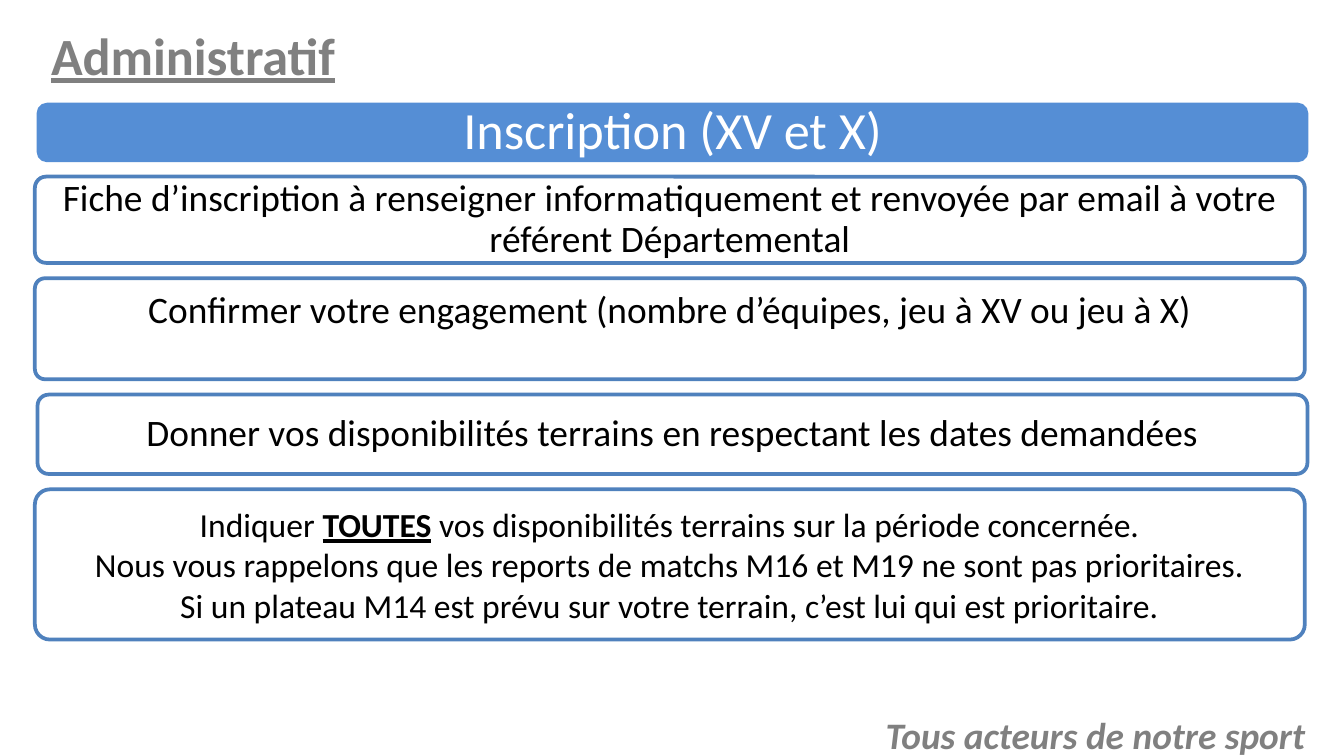
from pptx import Presentation
from pptx.dml.color import RGBColor
from pptx.enum.shapes import MSO_SHAPE as Shape
from pptx.enum.text import MSO_ANCHOR as Anchor, MSO_AUTO_SIZE as AutoSize, PP_ALIGN as Align
from pptx.util import Cm, Pt

WHITE = RGBColor(0xFF, 0xFF, 0xFF)
BLACK = RGBColor(0x00, 0x00, 0x00)
GREY = RGBColor(0x80, 0x80, 0x80)
HEADER_BLUE = RGBColor(0x55, 0x8E, 0xD5)
BORDER_BLUE = RGBColor(0x4F, 0x81, 0xBD)

FONT = "Calibri"
PANEL_WIDTH = 24
PANEL_GAP = 0.29
EMPHASIS = "TOUTES"

PANELS = [
    dict(text="Inscription (XV et X)", left=0.71, height=1.09, corner=0.167,
         fill=HEADER_BLUE, border=HEADER_BLUE, weight=1, size=28, color=WHITE),
    dict(text="Fiche d’inscription à renseigner informatiquement et renvoyée par email "
              "à votre référent Départemental", left=0.66, height=1.63, corner=0.13),
    dict(text="Confirmer votre engagement (nombre d’équipes, jeu à XV ou jeu à X)",
         left=0.66, height=1.91, corner=0.1, anchor=Anchor.TOP),
    dict(text="Donner vos disponibilités terrains en respectant les dates demandées",
         left=0.71, height=1.5, corner=0.14),
    dict(text="Indiquer TOUTES vos disponibilités terrains sur la période concernée.\n"
              "Nous vous rappelons que les reports de matchs M16 et M19 ne sont pas prioritaires.\n"
              "Si un plateau M14 est prévu sur votre terrain, c’est lui qui est prioritaire.",
         left=0.66, height=2.84, corner=0.1, size=18, spacing=1.0),
]


def add_span(para, text, size, color, bold=False, italic=False, underline=False):
    span = para.add_run()
    span.text = text
    font = span.font
    font.name, font.size = FONT, Pt(size)
    font.bold, font.italic, font.underline = bold, italic, underline
    font.color.rgb = color


def write_text(frame, text, size=20, color=BLACK, align=Align.CENTER,
               anchor=Anchor.MIDDLE, spacing=1.0, **style):
    frame.word_wrap = True
    frame.auto_size = AutoSize.NONE
    frame.vertical_anchor = anchor
    for number, line in enumerate(text.split("\n")):
        para = frame.add_paragraph() if number else frame.paragraphs[0]
        para.alignment = align
        para.line_spacing = spacing
        before, word, after = line.partition(EMPHASIS)
        add_span(para, before, size, color, **style)
        if word:
            add_span(para, word, size, color, bold=True, underline=True)
            add_span(para, after, size, color, **style)


def add_title(page, text):
    title = page.shapes.title
    title.left, title.top, title.width, title.height = Cm(0.71), Cm(0.36), Cm(PANEL_WIDTH), Cm(1.35)
    write_text(title.text_frame, text, size=28, color=GREY, align=Align.LEFT,
               bold=True, underline=True)


def add_panel(page, text, left, top, height, corner, fill=WHITE, border=BORDER_BLUE,
              weight=2, spacing=0.9, **style):
    box = page.shapes.add_shape(Shape.ROUNDED_RECTANGLE, Cm(left), Cm(top),
                                Cm(PANEL_WIDTH), Cm(height))
    box.adjustments[0] = corner
    box.shadow.inherit = False
    box.fill.solid()
    box.fill.fore_color.rgb = fill
    box.line.color.rgb = border
    box.line.width = Pt(weight)
    frame = box.text_frame
    frame.margin_left = frame.margin_right = frame.margin_top = frame.margin_bottom = Cm(0.2)
    write_text(frame, text, spacing=spacing, **style)


def add_motto(page, text):
    box = page.shapes.add_textbox(Cm(16.31), Cm(13.34), Cm(8.79), Cm(0.94))
    write_text(box.text_frame, text, color=GREY, anchor=Anchor.TOP, bold=True, italic=True)


def main():
    deck = Presentation()
    deck.slide_width, deck.slide_height = Cm(25.4), Cm(14.29)
    page = deck.slides.add_slide(deck.slide_layouts.get_by_name("Title Only"))
    add_title(page, "Administratif")
    top = 1.96
    for panel in PANELS:
        add_panel(page, top=top, **panel)
        top += panel["height"] + PANEL_GAP
    add_motto(page, "Tous acteurs de notre sport")
    deck.save("out.pptx")


if __name__ == "__main__":
    main()
